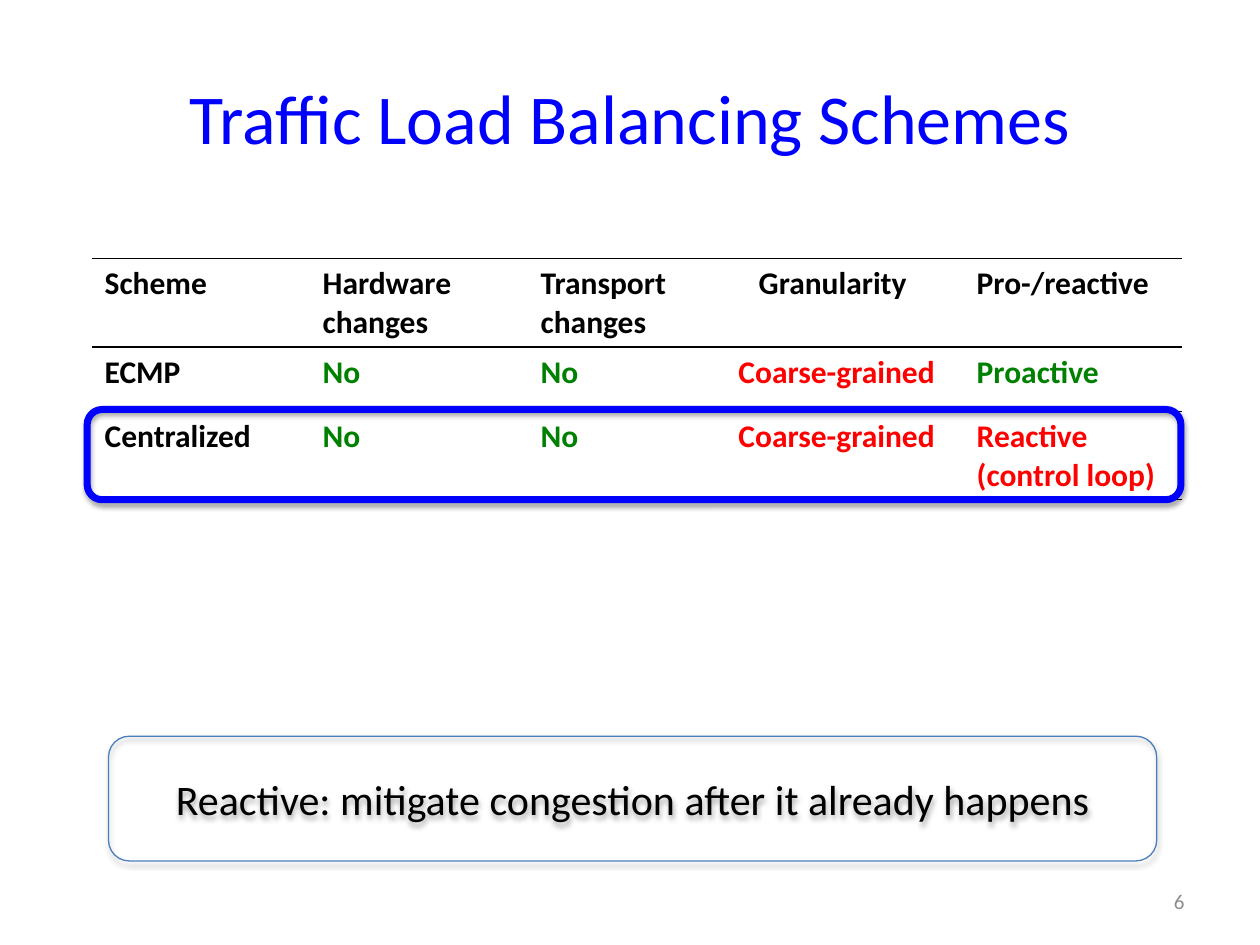
import dataclasses

import lxml.etree
import pptx
import pptx.dml.color
import pptx.enum.shapes
import pptx.enum.text
import pptx.oxml.ns
import pptx.util

Pt = pptx.util.Pt
Align = pptx.enum.text.PP_ALIGN
qn = pptx.oxml.ns.qn


@dataclasses.dataclass(frozen=True)
class Theme:
    font: str = "Calibri"
    blue: str = "0000FF"
    outline: str = "4B7EBC"
    black: str = "000000"
    good: str = "008000"
    bad: str = "FF0000"
    gray: str = "8C8C8C"
    title_size: float = 40
    message_size: float = 24
    table_size: float = 18
    number_size: float = 12


def rgb(color):
    return pptx.dml.color.RGBColor.from_string(color)


def write_text(frame, text, *, font, size, color, bold=False, align=Align.LEFT,
               anchor=pptx.enum.text.MSO_ANCHOR.MIDDLE):
    frame.word_wrap = True
    frame.vertical_anchor = anchor
    for index, line in enumerate(text.split("\n")):
        paragraph = frame.add_paragraph() if index else frame.paragraphs[0]
        paragraph.alignment = align
        run = paragraph.add_run()
        run.text = line
        run.font.name = font
        run.font.size = Pt(size)
        run.font.bold = bold
        run.font.color.rgb = rgb(color)


class SlideBuilder:
    def __init__(self, slide, theme):
        self.slide = slide
        self.theme = theme

    def text(self, text, box, **text_format):
        shape = self.slide.shapes.add_textbox(*map(Pt, box))
        write_text(shape.text_frame, text, font=self.theme.font, **text_format)

    def rounded_box(self, box, line_color, line_width, text="", **text_format):
        shape = self.slide.shapes.add_shape(
            pptx.enum.shapes.MSO_SHAPE.ROUNDED_RECTANGLE, *map(Pt, box))
        shape.fill.background()
        shape.line.color.rgb = rgb(line_color)
        shape.line.width = Pt(line_width)
        self.add_shadow(shape)
        if text:
            write_text(shape.text_frame, text, font=self.theme.font, **text_format)

    def add_shadow(self, shape):
        shape.shadow.inherit = False
        effects = shape._element.spPr.find(qn("a:effectLst"))
        shadow = lxml.etree.SubElement(
            effects, qn("a:outerShdw"), blurRad=str(Pt(3.1)), dist=str(Pt(1.8)),
            dir="5400000", rotWithShape="0")
        color = lxml.etree.SubElement(shadow, qn("a:srgbClr"), val=self.theme.black)
        lxml.etree.SubElement(color, qn("a:alpha"), val="35000")

    def table_row(self, left, top, height, widths, entries):
        shape = self.slide.shapes.add_table(
            1, len(widths), Pt(left), Pt(top), Pt(sum(widths)), Pt(height))
        table = shape.table
        table.first_row = table.horz_banding = False
        table.rows[0].height = Pt(height)
        for column, width in zip(table.columns, widths):
            column.width = Pt(width)
        for cell, (text, color) in zip(table.rows[0].cells, entries):
            cell.fill.background()
            self.cell_borders(cell)
            write_text(cell.text_frame, text, font=self.theme.font,
                       size=self.theme.table_size, color=color, bold=True)
            cell.vertical_anchor = pptx.enum.text.MSO_ANCHOR.TOP

    def cell_borders(self, cell):
        properties = cell._tc.get_or_add_tcPr()
        for index, side in enumerate(("lnL", "lnR", "lnT", "lnB")):
            line = lxml.etree.Element(qn(f"a:{side}"), w=str(Pt(1)))
            properties.insert(index, line)
            if side in ("lnT", "lnB"):
                fill = lxml.etree.SubElement(line, qn("a:solidFill"))
                lxml.etree.SubElement(fill, qn("a:srgbClr"), val=self.theme.black)
            else:
                lxml.etree.SubElement(line, qn("a:noFill"))


def main():
    presentation = pptx.Presentation()
    presentation.slide_width = Pt(720)
    presentation.slide_height = Pt(540)
    slide = presentation.slides.add_slide(presentation.slide_layouts[6])
    theme = Theme()
    builder = SlideBuilder(slide, theme)

    builder.text("Traffic Load Balancing Schemes", (36, 21.6, 648, 90),
                 size=theme.title_size, color=theme.blue, align=Align.CENTER)
    builder.text("6", (516, 500.5, 168, 28.75),
                 size=theme.number_size, color=theme.gray, align=Align.RIGHT)

    black, good, bad = theme.black, theme.good, theme.bad
    header_widths = [124.6] * 5
    scheme_widths = [124.6, 124.6, 113, 136.2, 124.6]
    headers = ("Scheme", "Hardware changes", "Transport\nchanges",
               "Granularity", "Pro-/reactive")
    rows = [
        (50.4, header_widths, [(header, black) for header in headers]),
        (36.9, scheme_widths, [("ECMP", black), ("No", good), ("No", good),
                               ("Coarse-grained", bad), ("Proactive", good)]),
        (50.4, scheme_widths, [("Centralized", black), ("No", good), ("No", good),
                               ("Coarse-grained", bad),
                               ("Reactive\n(control loop)", bad)]),
    ]
    top = 147.8
    for height, widths, entries in rows:
        builder.table_row(52.6, top, height, widths, entries)
        top += height

    builder.rounded_box((49.8, 234, 625, 51.6), theme.blue, 4)
    builder.rounded_box((62, 420.7, 599, 71.3), theme.outline, 0.75,
                        "Reactive: mitigate congestion after it already happens",
                        size=theme.message_size, color=black, align=Align.CENTER)
    presentation.save("out.pptx")


if __name__ == "__main__":
    main()
